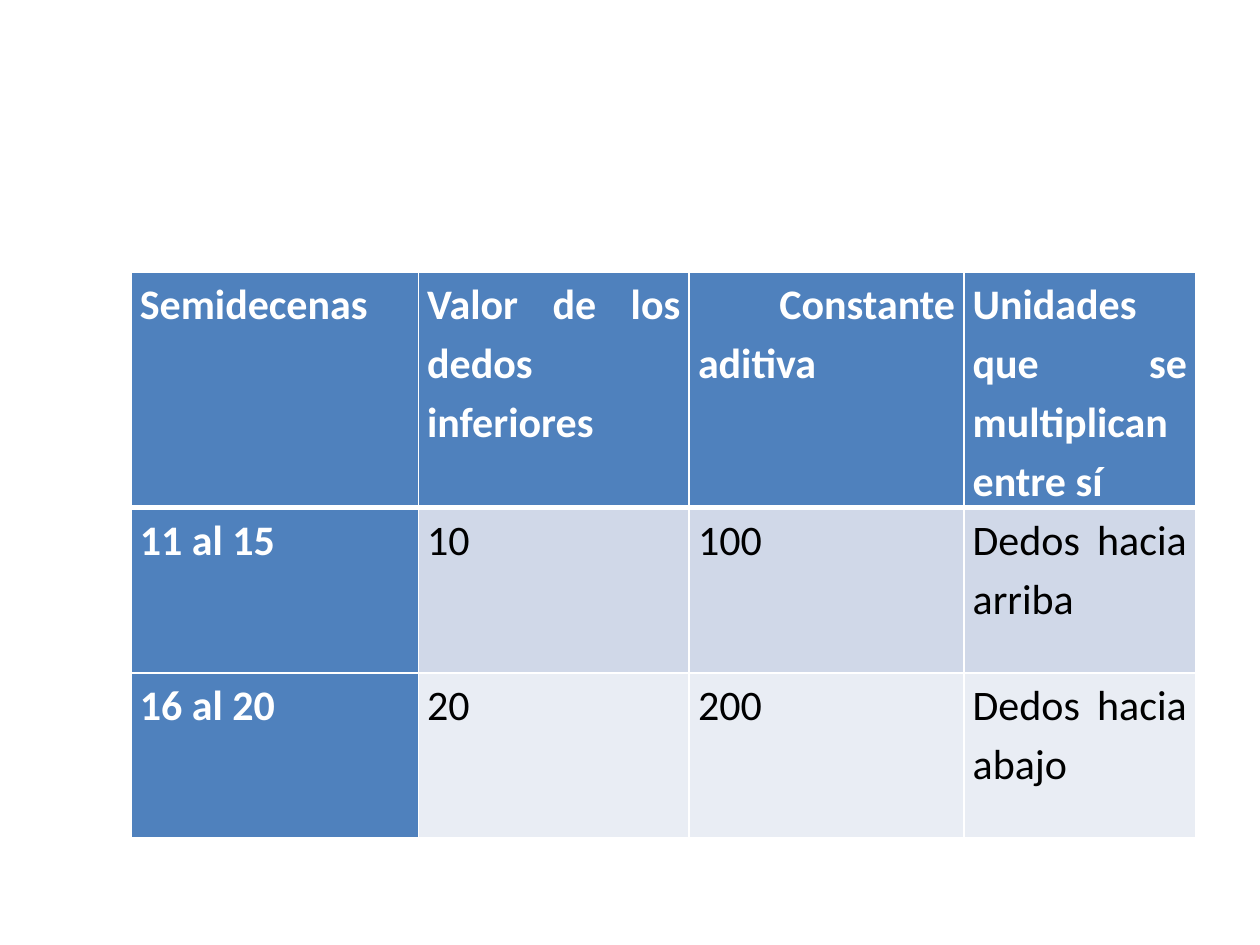
"""Build a slide with the finger multiplication table for the semi-tens from 11 to 20."""
from lxml import etree
from pptx import Presentation
from pptx.dml.color import RGBColor
from pptx.enum.text import PP_ALIGN
from pptx.oxml.ns import qn
from pptx.util import Inches, Pt

JUSTIFY = PP_ALIGN.JUSTIFY
WHITE, BLACK, BLUE = "FFFFFF", "000000", "4F81BD"
BAND_FILLS = ["D0D8E8", "E9EDF4"]

ROWS = [
    ["Semidecenas", "Valor de los dedos inferiores", " Constante aditiva",
     "Unidades que se multiplican entre sí"],
    ["11 al 15", "10", "100", "Dedos hacia arriba"],
    ["16 al 20", "20", "200", "Dedos hacia abajo"],
]
LEFT, TOP = 1.04, 2.16
COLUMN_WIDTHS = [2.28, 2.15, 2.18, 1.84]
ROW_HEIGHTS = [1.83, 1.31, 1.31]


def color(value):
    return RGBColor.from_string(value)


def add_borders(cell, row_index):
    properties = cell._tc.get_or_add_tcPr()
    widths = {
        "a:lnL": 1,
        "a:lnR": 1,
        "a:lnT": 3 if row_index == 1 else 1,
        "a:lnB": 3 if row_index == 0 else 1,
    }
    for tag, width in widths.items():
        line = etree.SubElement(properties, qn(tag), w=str(Pt(width)))
        fill = etree.SubElement(line, qn("a:solidFill"))
        etree.SubElement(fill, qn("a:srgbClr"), val=WHITE)


def format_cell(cell, text, row_index, column_index):
    heading = row_index == 0 or column_index == 0
    add_borders(cell, row_index)
    cell.fill.solid()
    cell.fill.fore_color.rgb = color(BLUE if heading else BAND_FILLS[row_index - 1])
    cell.margin_left = cell.margin_right = Inches(0.07)
    cell.margin_top = cell.margin_bottom = 0
    cell.text_frame.text = text
    paragraph = cell.text_frame.paragraphs[0]
    paragraph.alignment = JUSTIFY
    paragraph.line_spacing = 1.15
    font = paragraph.runs[0].font
    font.name = "Calibri"
    font.size = Pt(24)
    font.bold = heading
    font.color.rgb = color(WHITE if heading else BLACK)


def main():
    presentation = Presentation()
    presentation.slide_width, presentation.slide_height = Inches(10), Inches(7.5)
    slide = presentation.slides.add_slide(presentation.slide_layouts[6])
    table = slide.shapes.add_table(
        len(ROWS), len(COLUMN_WIDTHS), Inches(LEFT), Inches(TOP),
        Inches(sum(COLUMN_WIDTHS)), Inches(sum(ROW_HEIGHTS))).table
    table.first_col = True
    for column, width in zip(table.columns, COLUMN_WIDTHS):
        column.width = Inches(width)
    for row, height in zip(table.rows, ROW_HEIGHTS):
        row.height = Inches(height)
    for row_index, texts in enumerate(ROWS):
        for column_index, text in enumerate(texts):
            format_cell(table.cell(row_index, column_index), text, row_index, column_index)
    presentation.save("out.pptx")


if __name__ == "__main__":
    main()
